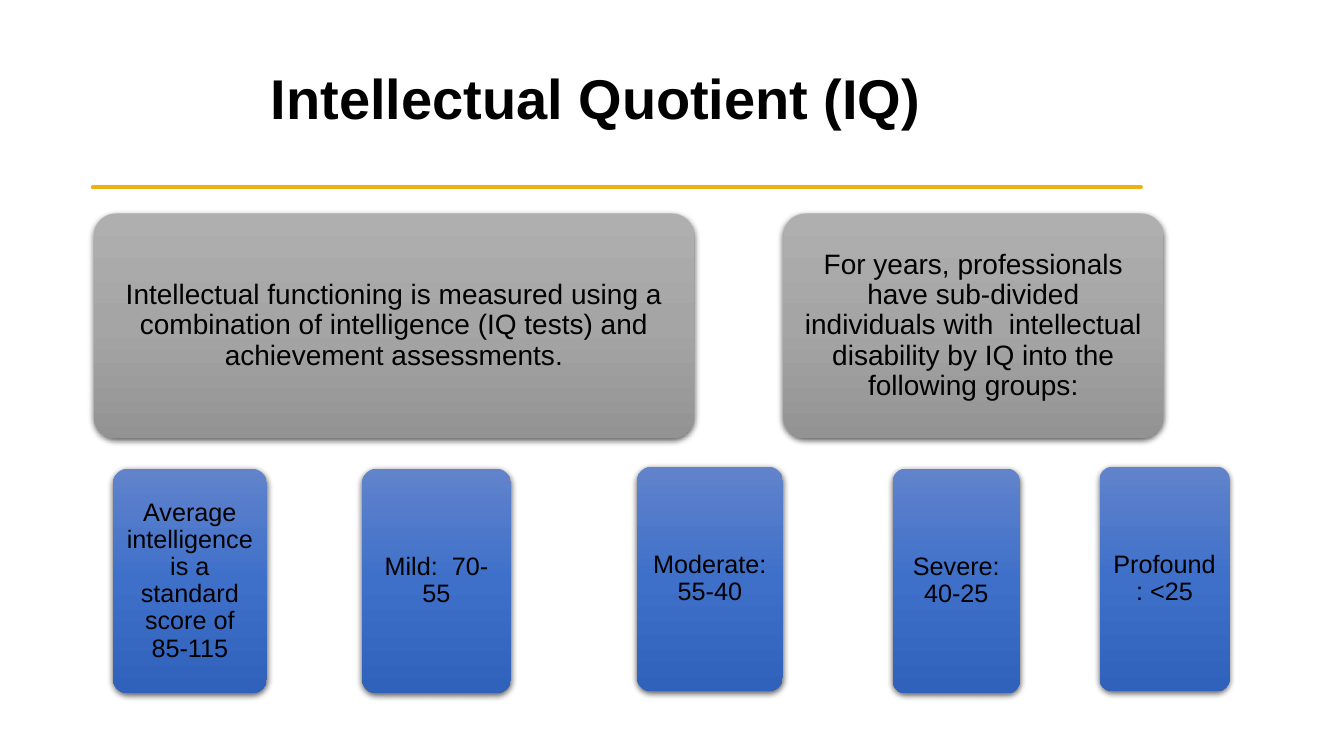
from lxml.etree import SubElement
from pptx import Presentation
from pptx.dml.color import RGBColor
from pptx.enum.shapes import MSO_CONNECTOR, MSO_SHAPE
from pptx.enum.text import MSO_ANCHOR, PP_ALIGN
from pptx.oxml.ns import qn
from pptx.util import Cm, Pt

COLORS = {
    "text": "000000",
    "rule": "EEB111",
    "grey": ("AFAFAF", "A5A5A5", "939393"),
    "blue": ("6183CB", "3E70CA", "3062BB"),
}
CARD_HEIGHT = 5.66
STATEMENT_TOP = 5.38

# left, width, text
STATEMENTS = [
    (2.36, 15.14, "Intellectual functioning is measured using a combination of "
                  "intelligence (IQ tests) and achievement assessments."),
    (19.74, 9.58, "For years, professionals have sub-divided individuals with  "
                  "intellectual disability by IQ into the following groups:"),
]
# left, top, width, text
IQ_GROUPS = [
    (2.84, 11.81, 3.89, "Average intelligence is a standard score of 85-115"),
    (9.12, 11.81, 3.76, "Mild:  70-55"),
    (16.05, 11.76, 3.68, "Moderate: 55-40"),
    (22.5, 11.81, 3.2, "Severe: 40-25"),
    (27.71, 11.76, 3.28, "Profound: <25"),
]


def write_text(shape, text, size, align, bold=False):
    frame = shape.text_frame
    frame.word_wrap = True
    frame.vertical_anchor = MSO_ANCHOR.MIDDLE
    para = frame.paragraphs[0]
    para.alignment = align
    para.line_spacing = 0.9
    span = para.add_run()
    span.text = text
    span.font.name = "Arial"
    span.font.size = Pt(size)
    span.font.bold = bold
    span.font.color.rgb = RGBColor.from_string(COLORS["text"])


def add_title(page, text):
    box = page.shapes.add_textbox(Cm(6.58), Cm(0.71), Cm(21.92), Cm(3.68))
    write_text(box, text, 40, PP_ALIGN.LEFT, bold=True)


def add_rule(page):
    rule = page.shapes.add_connector(
        MSO_CONNECTOR.STRAIGHT, Cm(2.34), Cm(4.72), Cm(28.75), Cm(4.72))
    rule.line.width = Pt(3)
    rule.line.color.rgb = RGBColor.from_string(COLORS["rule"])
    properties = rule._element.spPr
    properties.find(qn("a:ln")).set("cap", "rnd")
    SubElement(properties, qn("a:effectLst"))


def fill_gradient(shape, shades):
    """Fill from top to bottom with evenly spaced shades."""
    shape.fill.gradient()
    shape.fill.gradient_angle = 270
    stops = shape._element.spPr.find(qn("a:gradFill")).find(qn("a:gsLst"))
    stops.clear()
    for index, shade in enumerate(shades):
        position = 100000 * index // (len(shades) - 1)
        stop = SubElement(stops, qn("a:gs"), pos=str(position))
        SubElement(stop, qn("a:srgbClr"), val=shade)


def add_drop_shadow(shape):
    shape.shadow.inherit = False
    effects = shape._element.spPr.find(qn("a:effectLst"))
    shadow = SubElement(effects, qn("a:outerShdw"), blurRad=str(Pt(4.5)),
                        dist=str(Pt(1.5)), dir="5400000", algn="ctr", rotWithShape="0")
    color = SubElement(shadow, qn("a:srgbClr"), val="000000")
    SubElement(color, qn("a:alpha"), val="63000")


def add_card(page, left, top, width, text, shades, size, inset):
    card = page.shapes.add_shape(
        MSO_SHAPE.ROUNDED_RECTANGLE, Cm(left), Cm(top), Cm(width), Cm(CARD_HEIGHT))
    card.adjustments[0] = 0.1
    fill_gradient(card, shades)
    card.line.fill.background()
    add_drop_shadow(card)
    frame = card.text_frame
    frame.margin_left = frame.margin_right = Cm(inset)
    frame.margin_top = frame.margin_bottom = Cm(inset)
    write_text(card, text, size, PP_ALIGN.CENTER)


def main():
    deck = Presentation()
    deck.slide_width = Cm(33.87)
    deck.slide_height = Cm(19.05)
    page = deck.slides.add_slide(deck.slide_layouts[6])

    add_rule(page)
    add_title(page, "Intellectual Quotient (IQ)")
    for left, width, text in STATEMENTS:
        add_card(page, left, STATEMENT_TOP, width, text, COLORS["grey"], 20, 0.21)
    for left, top, width, text in IQ_GROUPS:
        add_card(page, left, top, width, text, COLORS["blue"], 18, 0.19)

    deck.save("out.pptx")


if __name__ == "__main__":
    main()
